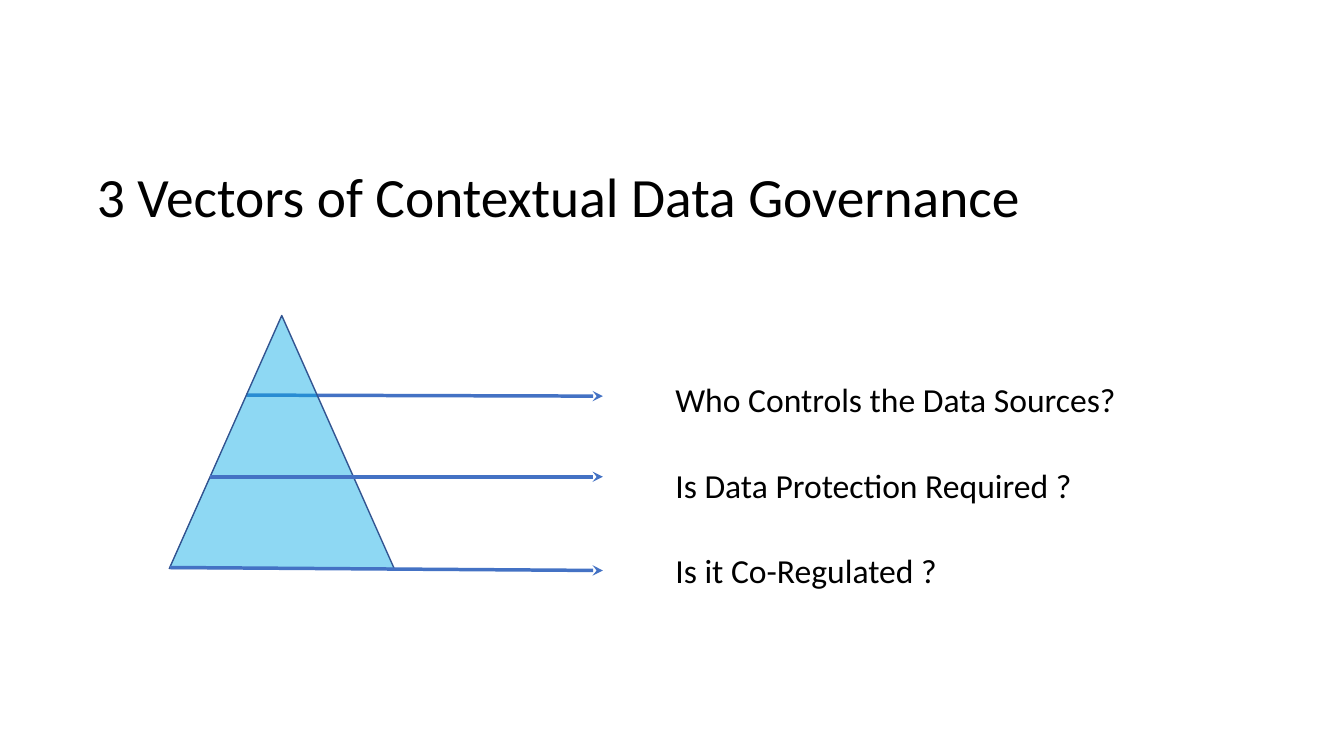
from lxml import etree
from pptx import Presentation
from pptx.dml.color import RGBColor
from pptx.enum.shapes import MSO_CONNECTOR, MSO_SHAPE
from pptx.enum.text import MSO_ANCHOR, MSO_AUTO_SIZE, PP_ALIGN
from pptx.oxml.ns import qn
from pptx.util import Inches, Pt

TITLE = "3 Vectors of Contextual Data Governance"
# question, height where its arrow starts, height where it ends
VECTORS = [
    ("Who Controls the Data Sources?", 3.92, 3.93),
    ("Is Data Protection Required ?", 4.73, 4.73),
    ("Is it Co-Regulated ?", 5.63, 5.66),
]
BLACK = RGBColor(0x00, 0x00, 0x00)
ARROW_BLUE = RGBColor(0x44, 0x72, 0xC4)
PYRAMID_FILL = RGBColor(0x09, 0xAB, 0xE5)
PYRAMID_EDGE = RGBColor(0x32, 0x54, 0x91)
PYRAMID_OPACITY = 46

PYRAMID_LEFT, PYRAMID_TOP, PYRAMID_WIDTH, PYRAMID_HEIGHT = 1.68, 3.13, 2.23, 2.51
ARROW_END = 5.98
QUESTION_LEFT, QUESTION_TOP, QUESTION_PITCH = 6.6, 3.71, 0.85
QUESTION_WIDTH, QUESTION_HEIGHT = 5.2, 0.5


def write(frame, text, size, anchor):
    frame.word_wrap = True
    frame.vertical_anchor = anchor
    frame.text = text
    paragraph = frame.paragraphs[0]
    paragraph.alignment = PP_ALIGN.LEFT
    font = paragraph.runs[0].font
    for name, value in {"size": Pt(size), "name": "Calibri", "bold": False}.items():
        setattr(font, name, value)
    font.color.rgb = BLACK
    return paragraph


def pyramid_edge(y):
    """Return the x of the pyramid's left side at height y."""
    rise = (PYRAMID_TOP + PYRAMID_HEIGHT - y) / PYRAMID_HEIGHT
    return PYRAMID_LEFT + rise * PYRAMID_WIDTH / 2


def add_arrow(slide, start_y, end_y):
    arrow = slide.shapes.add_connector(
        MSO_CONNECTOR.STRAIGHT, Inches(pyramid_edge(start_y)), Inches(start_y),
        Inches(ARROW_END), Inches(end_y))
    arrow.line.color.rgb = ARROW_BLUE
    arrow.line.width = Pt(2.5)
    etree.SubElement(arrow.line._get_or_add_ln(), qn("a:tailEnd"), type="stealth")
    etree.SubElement(arrow._element.spPr, qn("a:effectLst"))


def add_pyramid(slide):
    pyramid = slide.shapes.add_shape(
        MSO_SHAPE.ISOSCELES_TRIANGLE, Inches(PYRAMID_LEFT), Inches(PYRAMID_TOP),
        Inches(PYRAMID_WIDTH), Inches(PYRAMID_HEIGHT))
    pyramid.shadow.inherit = False
    pyramid.fill.solid()
    pyramid.fill.fore_color.rgb = PYRAMID_FILL
    color = pyramid._element.spPr.find(qn("a:solidFill")).find(qn("a:srgbClr"))
    etree.SubElement(color, qn("a:alpha"), val=str(PYRAMID_OPACITY * 1000))
    pyramid.line.color.rgb = PYRAMID_EDGE
    pyramid.line.width = Pt(1)


def add_question(slide, row, question):
    box = slide.shapes.add_textbox(
        Inches(QUESTION_LEFT), Inches(QUESTION_TOP + row * QUESTION_PITCH),
        Inches(QUESTION_WIDTH), Inches(QUESTION_HEIGHT))
    write(box.text_frame, question, 24, MSO_ANCHOR.TOP)
    box.text_frame.auto_size = MSO_AUTO_SIZE.SHAPE_TO_FIT_TEXT


def main():
    deck = Presentation()
    deck.slide_width, deck.slide_height = Inches(13.33), Inches(7.5)
    slide = deck.slides.add_slide(deck.slide_layouts[5])

    title = slide.shapes.title
    title.left, title.top = Inches(0.86), Inches(1.71)
    title.width, title.height = Inches(12), Inches(0.54)
    heading = write(title.text_frame, TITLE, 39.6, MSO_ANCHOR.MIDDLE)
    heading.line_spacing = 0.9
    title.text_frame.auto_size = MSO_AUTO_SIZE.NONE

    for row, (question, start_y, end_y) in enumerate(VECTORS):
        add_arrow(slide, start_y, end_y)
        if row == 0:  # only the top arrow runs behind the pyramid
            add_pyramid(slide)
        add_question(slide, row, question)

    deck.save("out.pptx")


if __name__ == "__main__":
    main()
